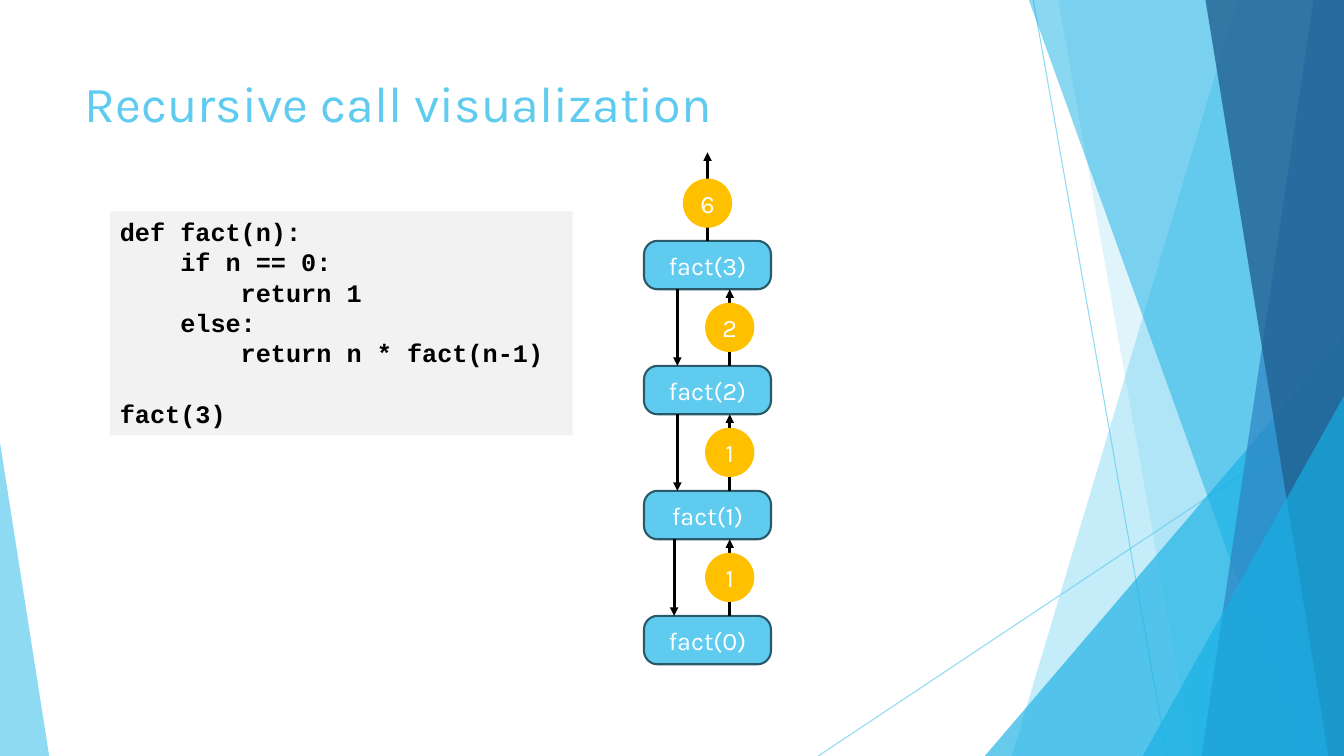
import pptx
import pptx.dml.color
import pptx.enum.shapes
import pptx.enum.text
import pptx.oxml
import pptx.oxml.ns
import pptx.util

Cm = pptx.util.Cm
Pt = pptx.util.Pt
SHAPE = pptx.enum.shapes.MSO_SHAPE
ALIGN = pptx.enum.text.PP_ALIGN
ANCHOR = pptx.enum.text.MSO_ANCHOR

WIDTH, HEIGHT = 33.87, 19.05
SKY, CYAN, WHITE, BLACK = "5FCBEF", "17B0E4", "FFFFFF", "000000"
LINE_PITCH = 21.6
CODE_STEP = Pt(43.2)
CODE = [
    ("def fact(n):", 0, 0),
    ("if n == 0:", 1, 0),
    ("return 1", 2, 0),
    ("else:", 1, 0),
    ("return n * fact(n-1)", 2, 0),
    ("fact(3)", 0, LINE_PITCH),
]
CALL_LEFT, CALL_TOP, CALL_WIDTH, CALL_HEIGHT = 16.23, 6.07, 3.2, 1.22
CALL_PITCH = 3.15
RETURN_X = 18.39
VALUE_SIZE = 1.24


def paint(color_owner, color, opacity=100):
    """Give a fill or a line fill a solid colour with an opacity in percent."""
    color_owner.solid()
    color_owner.fore_color.rgb = pptx.dml.color.RGBColor.from_string(color)
    if opacity < 100:
        rgb = color_owner._xPr.find(".//" + pptx.oxml.ns.qn("a:srgbClr"))
        alpha = pptx.oxml.parse_xml(
            f'<a:alpha {pptx.oxml.ns.nsdecls("a")} val="{opacity * 1000}"/>')
        rgb.append(alpha)


def write(paragraph, text, size=18, font="Karla", color=WHITE, bold=False,
          align=ALIGN.CENTER, indent=0, before=0, pitch=None):
    """Put formatted text into a paragraph."""
    run = paragraph.add_run()
    run.text = text
    run.font.size, run.font.name, run.font.bold = Pt(size), font, bold
    paint(run.font.fill, color)
    paragraph.alignment = align
    if indent:
        paragraph._p.get_or_add_pPr().set("marL", str(indent))
    if before:
        paragraph.space_before = Pt(before)
    if pitch:
        paragraph.line_spacing = Pt(pitch)


def finish(shape, color, opacity=100, outline=None):
    """Set the fill and the outline of a shape and drop its shadow."""
    shape.shadow.inherit = False
    paint(shape.fill, color, opacity)
    if outline:
        paint(shape.line.fill, outline)
        shape.line.width = Pt(1.5)
    else:
        shape.line.fill.background()
    return shape


def add_preset(slide, kind, left, top, width, height, color, opacity=100,
               outline=None, adjust=None):
    """Add a preset shape measured in centimetres."""
    shape = slide.shapes.add_shape(kind, Cm(left), Cm(top), Cm(width), Cm(height))
    if adjust is not None:
        shape.adjustments[0] = adjust
    return finish(shape, color, opacity, outline)


def add_band(slide, top_left, bottom_left, color, opacity):
    """Add a slanted band that reaches to the right edge of the slide."""
    builder = slide.shapes.build_freeform(Cm(top_left), 0)
    corners = [(WIDTH, 0), (WIDTH, HEIGHT), (bottom_left, HEIGHT)]
    builder.add_line_segments([(Cm(x), Cm(y)) for x, y in corners], close=True)
    finish(builder.convert_to_shape(), color, opacity)


def add_line(slide, start, end, color=BLACK, width=2, opacity=100, arrow=True):
    """Add a straight line, with an arrowhead at its end if wanted."""
    line = slide.shapes.add_connector(
        pptx.enum.shapes.MSO_CONNECTOR.STRAIGHT, *map(Cm, start + end))
    paint(line.line.fill, color, opacity)
    line.line.width = Pt(width)
    namespace = pptx.oxml.ns.nsdecls("a")
    if arrow:
        line.line._get_or_add_ln().append(
            pptx.oxml.parse_xml(f'<a:tailEnd {namespace} type="triangle"/>'))
    line._element.spPr.append(pptx.oxml.parse_xml(f"<a:effectLst {namespace}/>"))
    return line


def add_backdrop(slide):
    """Draw the translucent facets at the edges of the slide."""
    for start, end in [((26.04, 0), (29.41, HEIGHT)),
                       ((WIDTH, 10.24), (20.62, HEIGHT))]:
        add_line(slide, start, end, SKY, 0.75, 70, arrow=False)
    add_band(slide, 31.19, 25.5, SKY, 36)
    add_band(slide, 26.67, 30.05, SKY, 20)
    add_corner(slide, 24.82, 8.46)
    add_band(slide, 25.93, 32.79, CYAN, 50)
    add_band(slide, 33.1, 30.28, "2E83C3", 70)
    add_band(slide, 30.38, 33.48, "226292", 80)
    add_corner(slide, 28.8, 9.98)
    add_preset(slide, SHAPE.ISOSCELES_TRIANGLE, 0, 11.15, 1.24, HEIGHT - 11.15,
               SKY, 70, adjust=0)


def add_corner(slide, left, top):
    """Add a triangle that fills the lower right corner."""
    add_preset(slide, SHAPE.ISOSCELES_TRIANGLE, left, top, WIDTH - left,
               HEIGHT - top, CYAN, 66, adjust=1)


def add_title(slide, text):
    """Add the slide title."""
    title = slide.shapes.add_textbox(Cm(1.88), Cm(1.7), Cm(23.88), Cm(3.66))
    title.text_frame.word_wrap = True
    write(title.text_frame.paragraphs[0], text, size=36, color=SKY, align=ALIGN.LEFT)


def add_code(slide):
    """Add the code listing on its grey panel."""
    listing = add_preset(slide, SHAPE.RECTANGLE, 2.77, 5.33, 11.66, 5.64, "F2F2F2")
    frame = listing.text_frame
    frame.vertical_anchor = ANCHOR.TOP
    for number, (text, depth, before) in enumerate(CODE):
        paragraph = frame.add_paragraph() if number else frame.paragraphs[0]
        write(paragraph, text, font="Courier New", color=BLACK, bold=True,
              align=ALIGN.LEFT, indent=depth * CODE_STEP, before=before,
              pitch=LINE_PITCH)


def add_call(slide, text, top):
    """Add the box of one function call."""
    call = add_preset(slide, SHAPE.ROUNDED_RECTANGLE, CALL_LEFT, top, CALL_WIDTH,
                      CALL_HEIGHT, SKY, outline="2A5969", adjust=0.28)
    call.text_frame.vertical_anchor = ANCHOR.MIDDLE
    write(call.text_frame.paragraphs[0], text)
    return call


def add_value(slide, text, center_x, top):
    """Add the circle of one returned value."""
    value = add_preset(slide, SHAPE.OVAL, center_x - VALUE_SIZE / 2, top,
                       VALUE_SIZE, VALUE_SIZE, "FFC000")
    frame = value.text_frame
    frame.margin_left = frame.margin_right = 0
    frame.vertical_anchor = ANCHOR.MIDDLE
    write(frame.paragraphs[0], text)


def add_call_stack(slide):
    """Add the chain of calls with the values they return."""
    tops = [CALL_TOP + CALL_PITCH * level for level in range(4)]
    calls = [add_call(slide, f"fact({3 - level})", top)
             for level, top in enumerate(tops)]
    middle = CALL_LEFT + CALL_WIDTH / 2
    result = add_line(slide, (middle, CALL_TOP), (middle, 3.84))
    result.begin_connect(calls[0], 0)
    add_value(slide, "6", middle, 4.5)
    steps = zip(tops, tops[1:], [17.07, 17.07, 16.99], "211")
    for caller_top, callee_top, call_x, returned in steps:
        caller_bottom = caller_top + CALL_HEIGHT
        add_line(slide, (call_x, caller_bottom), (call_x, callee_top))
        add_line(slide, (RETURN_X, callee_top), (RETURN_X, caller_bottom))
        add_value(slide, returned, RETURN_X, caller_top + 1.56)


def main():
    """Build and save the slide."""
    deck = pptx.Presentation()
    deck.slide_width, deck.slide_height = Cm(WIDTH), Cm(HEIGHT)
    slide = deck.slides.add_slide(deck.slide_layouts[6])
    add_backdrop(slide)
    add_title(slide, "Recursive call visualization")
    add_code(slide)
    add_call_stack(slide)
    deck.save("out.pptx")


if __name__ == "__main__":
    main()
